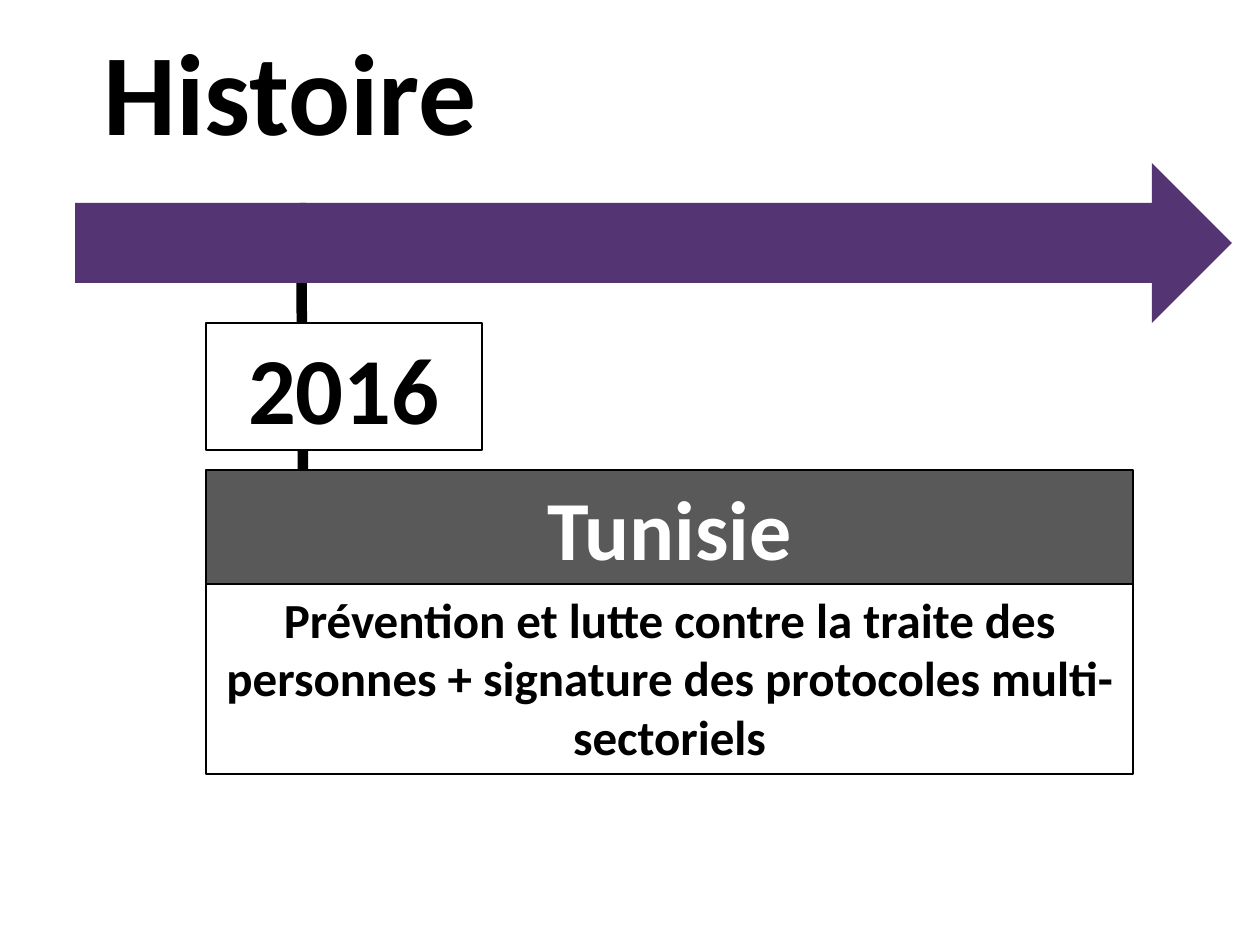
from lxml import etree
from pptx import Presentation
from pptx import util as u
from pptx.dml import color
from pptx.enum import shapes, text
from pptx.oxml import ns

SCALE = 914400 // 126
BLACK = "000000"
WHITE = "FFFFFF"
GREY = "595959"
PURPLE = "553474"


def px(n):
    return u.Emu(n * SCALE)


def rgb(value):
    return color.RGBColor.from_string(value)


def write(sp, words, size, ink, align, anchor):
    tf = sp.text_frame
    tf.text = words
    tf.word_wrap = True
    tf.vertical_anchor = anchor
    p = tf.paragraphs[0]
    p.alignment = align
    f = p.runs[0].font
    f.name, f.size, f.bold = "Calibri", u.Pt(size), True
    f.color.rgb = rgb(ink)
    return p


def add_title(s, words, box):
    sp = s.shapes.title
    sp.left, sp.top, sp.width, sp.height = map(px, box)
    p = write(sp, words, 66, BLACK, text.PP_ALIGN.LEFT, text.MSO_ANCHOR.TOP)
    p.line_spacing = 0.9
    sp.text_frame.auto_size = text.MSO_AUTO_SIZE.NONE


def add_stem(s, start, end):
    c = s.shapes.add_connector(shapes.MSO_CONNECTOR.STRAIGHT, *map(px, start + end))
    c.line.color.rgb = rgb(BLACK)
    c.line.width = u.Pt(6)
    etree.SubElement(c.line._get_or_add_ln().getparent(), ns.qn("a:effectLst"))


def add_filled(s, kind, box, fill):
    sp = s.shapes.add_shape(kind, *map(px, box))
    sp.shadow.inherit = False
    sp.fill.solid()
    sp.fill.fore_color.rgb = rgb(fill)
    return sp


def add_arrow(s, box, fill):
    sp = add_filled(s, shapes.MSO_SHAPE.RIGHT_ARROW, box, fill)
    sp.line.fill.background()


def add_box(s, words, box, size, fill=WHITE, ink=BLACK, anchor=text.MSO_ANCHOR.TOP):
    sp = add_filled(s, shapes.MSO_SHAPE.RECTANGLE, box, fill)
    sp.line.color.rgb = rgb(BLACK)
    sp.line.width = u.Pt(0.75)
    write(sp, words, size, ink, text.PP_ALIGN.CENTER, anchor)
    sp.text_frame.auto_size = text.MSO_AUTO_SIZE.SHAPE_TO_FIT_TEXT


def main():
    prs = Presentation()
    prs.slide_width, prs.slide_height = px(1260), px(945)
    s = prs.slides.add_slide(prs.slide_layouts[5])
    left, width = 206, 927
    add_title(s, "Histoire", (91, 29, 1086, 183))
    add_stem(s, (301, 203), (305, 758))
    add_arrow(s, (75, 163, 1157, 160), PURPLE)
    add_box(s, "Prévention et lutte contre la traite des personnes + signature "
            "des protocoles multi-sectoriels", (left, 583, width, 191), 28)
    add_box(s, "Tunisie", (left, 470, width, 114), 48, GREY, WHITE)
    add_box(s, "2016", (left, 323, 276, 127), 54, anchor=text.MSO_ANCHOR.MIDDLE)
    prs.save("out.pptx")


if __name__ == "__main__":
    main()
